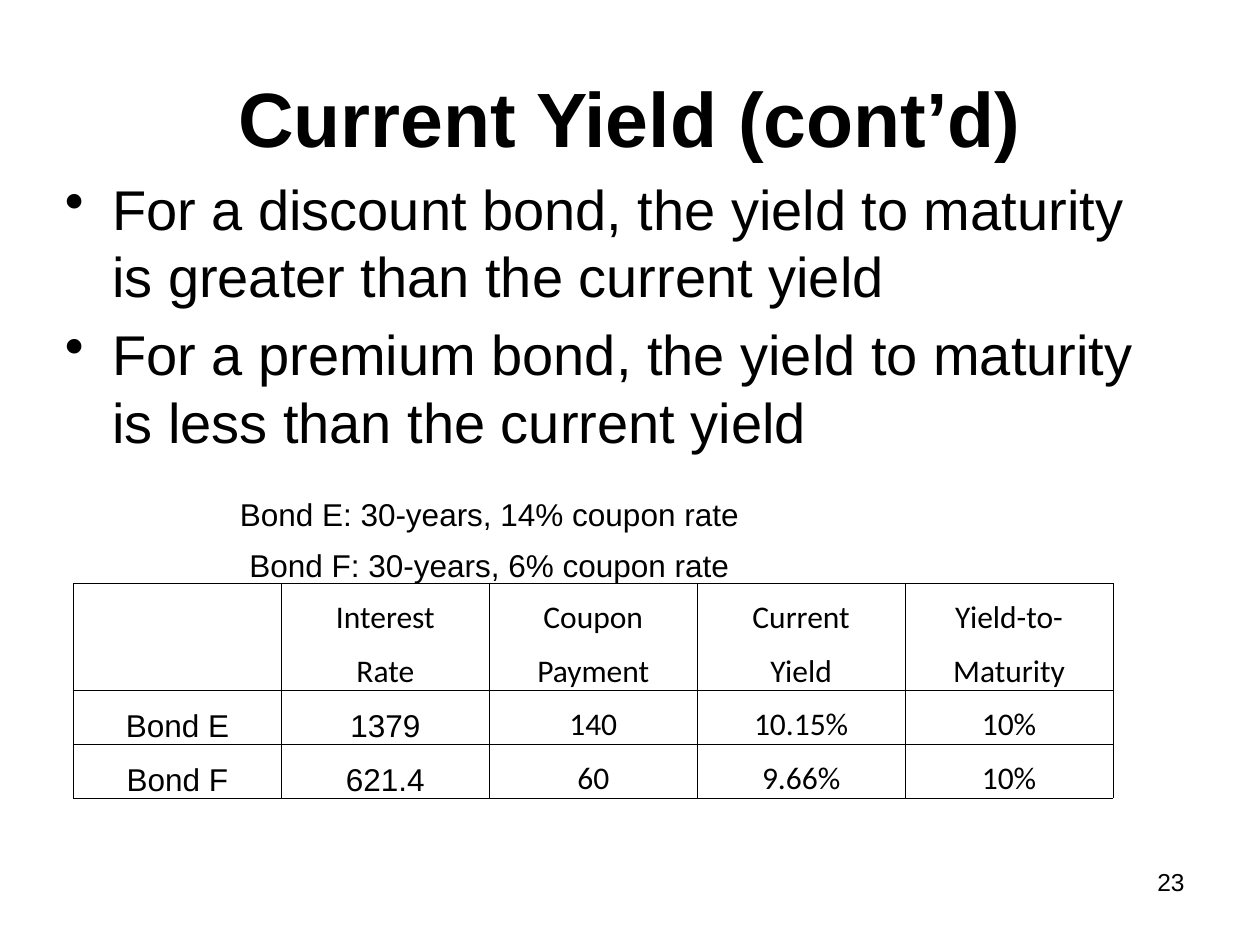
from lxml.etree import SubElement
from pptx import Presentation
from pptx.dml.color import RGBColor
from pptx.enum.text import MSO_ANCHOR, PP_ALIGN
from pptx.oxml.ns import qn
from pptx.util import Pt


def style(p, size, name="Arial", align=PP_ALIGN.CENTER, bold=False):
    p.alignment = align
    p.font.size = Pt(size)
    p.font.name = name
    p.font.bold = bold
    p.font.color.rgb = RGBColor.from_string("000000")


def add_text(left, top, width, height, lines, size, align, bold=False):
    tf = s.shapes.add_textbox(Pt(left), Pt(top), Pt(width), Pt(height)).text_frame
    tf.word_wrap = True
    tf.text = "\n".join(lines)
    for p in tf.paragraphs:
        style(p, size, align=align, bold=bold)
    return tf


prs = Presentation()
prs.slide_width, prs.slide_height = Pt(720), Pt(540)
s = prs.slides.add_slide(prs.slide_layouts[6])

title = add_text(36, 21.6, 648, 90, ["Current Yield (cont’d)"], 44, PP_ALIGN.CENTER, True)
title.vertical_anchor = MSO_ANCHOR.MIDDLE

body = add_text(30, 96, 648, 356, [
    "For a discount bond, the yield to maturity is greater than the current yield",
    "For a premium bond, the yield to maturity is less than the current yield",
], 32, PP_ALIGN.LEFT)
for p in body.paragraphs:
    p.space_before = Pt(6.4)
    pPr = p._p.get_or_add_pPr()
    pPr.set("marL", str(Pt(27)))
    pPr.set("indent", str(-Pt(27)))
    bullet = pPr.makeelement(qn("a:buChar"), {"char": "•"})
    pPr.find(qn("a:defRPr")).addprevious(bullet)

add_text(516, 492, 168, 37.5, ["23"], 14, PP_ALIGN.RIGHT)

rows = [
    ["Bond E: 30-years, 14% coupon rate", "", "", "", ""],
    ["Bond F: 30-years, 6% coupon rate", "", "", "", ""],
    ["", "Interest", "Coupon", "Current", "Yield-to-"],
    ["", "Rate", "Payment", "Yield", "Maturity"],
    ["Bond E", "1379", "140", "10.15%", "10%"],
    ["Bond F", "621.4", "60", "9.66%", "10%"],
]
borders = ["B" if i == 1 else "LRT" if i == 2 else "LRB" if i == 3 else "LRTB" if i > 3 else ""
           for i in range(len(rows))]
table = s.shapes.add_table(6, 5, Pt(42), Pt(276), Pt(594), Pt(180)).table
table.first_row = table.horz_banding = False
for i, row in enumerate(rows):
    table.rows[i].height = Pt(28.8 if i < 2 else 30.6)
    if i < 2:
        table.cell(i, 0).merge(table.cell(i, 3))
    for j, text in enumerate(row):
        cell = table.cell(i, j)
        cell.text = text
        cell.vertical_anchor = MSO_ANCHOR.BOTTOM
        cell.margin_left = cell.margin_right = cell.margin_top = Pt(0.7)
        cell.margin_bottom = Pt(0)
        arial = i < 2 or (i > 3 and j < 2)
        style(cell.text_frame.paragraphs[0], 18, "Arial" if arial else "Calibri")
        tcPr = cell._tc.get_or_add_tcPr()
        for side in "LRTB":
            ln = SubElement(tcPr, qn("a:ln" + side), w=str(Pt(0.5)))
            if side in borders[i]:
                SubElement(SubElement(ln, qn("a:solidFill")), qn("a:srgbClr"), val="000000")
            else:
                SubElement(ln, qn("a:noFill"))
        if i > 3 and j < 2:
            cell.fill.solid()
            cell.fill.fore_color.rgb = RGBColor.from_string("FFFFFF")
        else:
            cell.fill.background()

prs.save("out.pptx")
